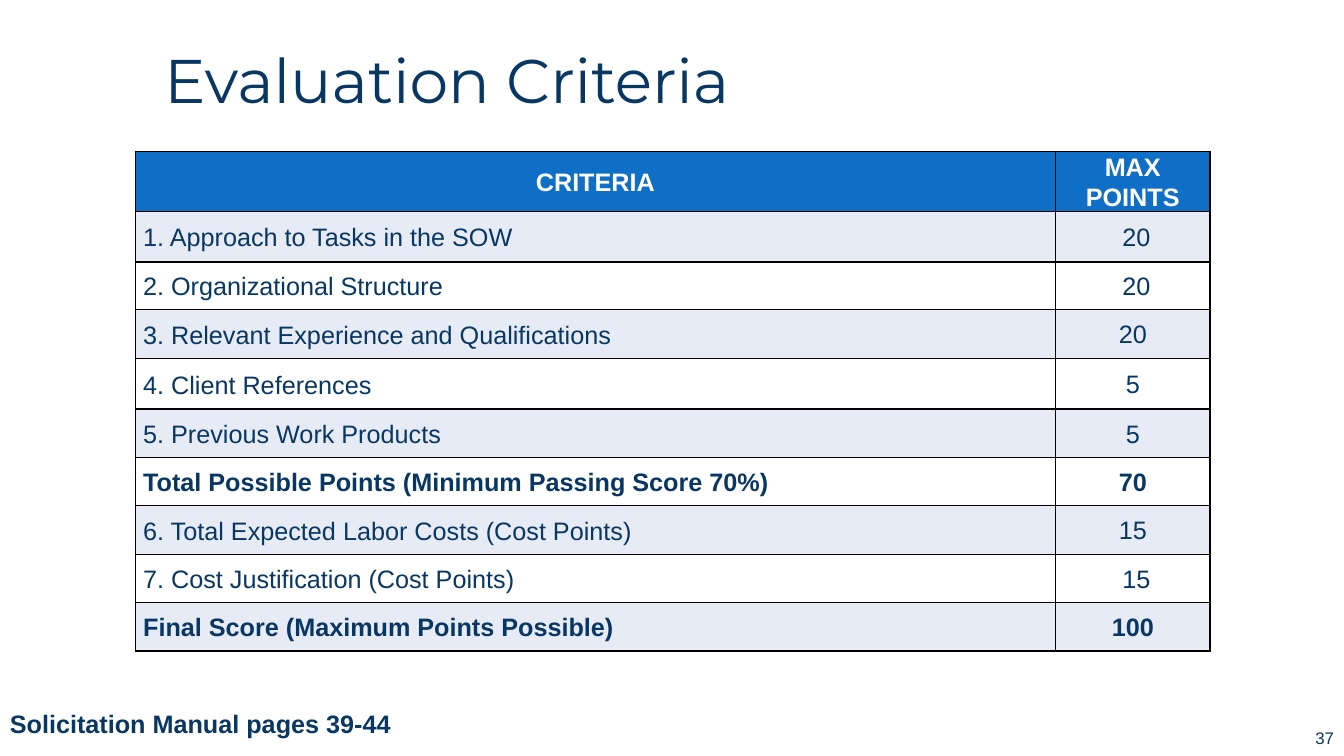
from pptx import Presentation
from pptx.dml.color import RGBColor
from pptx.enum.text import MSO_ANCHOR as Anchor, MSO_AUTO_SIZE as AutoSize, PP_ALIGN as Align
from pptx.oxml import parse_xml
from pptx.oxml.ns import nsdecls
from pptx.util import Inches, Pt

TITLE = "Evaluation Criteria"
HEADER = ("CRITERIA", "MAX POINTS")
CRITERIA = [
    ("1. Approach to Tasks in the SOW", " 20"),
    ("2. Organizational Structure", " 20"),
    ("3. Relevant Experience and Qualifications", "20"),
    ("4. Client References", "5"),
    ("5. Previous Work Products", "5"),
    ("Total Possible Points (Minimum Passing Score 70%)", "70"),
    ("6. Total Expected Labor Costs (Cost Points)", "15"),
    ("7. Cost Justification (Cost Points)", " 15"),
    ("Final Score (Maximum Points Possible)", "100"),
]
BOLD_ROWS = {0, 6, 9}
COLUMN_WIDTHS = (9.13, 1.53)
ROW_HEIGHTS = (0.51, 0.5, 0.47, 0.49, 0.5) + (0.48,) * 5
CAPTIONS = [
    ("Solicitation Manual pages 39-44", (0, 6.98, 4.39, 0.71), Anchor.TOP, Align.LEFT,
     {"size": Pt(18), "bold": True}),
    ("37", (11.36, 7.12, 1.97, 0.4), Anchor.MIDDLE, Align.RIGHT,
     {"size": Pt(12), "bold": False}),
]
COLORS = {"navy": "083763", "header": "0F6FC6", "band": "E7EBF5",
          "white": "FFFFFF", "border": "000000"}


def set_attributes(target, values):
    for name, value in values.items():
        setattr(target, name, value)


def write(frame, text, align, color, font, line_spacing=None):
    para = frame.paragraphs[0]
    set_attributes(para, {"alignment": align, "line_spacing": line_spacing})
    span = para.add_run()
    span.text = text
    set_attributes(span.font, {"name": "Arial", **font})
    span.font.color.rgb = RGBColor.from_string(COLORS[color])


def add_borders(cell):
    properties = cell._tc.get_or_add_tcPr()
    for index, side in enumerate(("lnL", "lnR", "lnT", "lnB")):
        properties.insert(index, parse_xml(
            f'<a:{side} {nsdecls("a")} w="{Pt(1)}"><a:solidFill>'
            f'<a:srgbClr val="{COLORS["border"]}"/></a:solidFill></a:{side}>'))


def add_title(page):
    title = page.shapes.title
    set_attributes(title, {"left": Inches(1.53), "top": Inches(0.26),
                           "width": Inches(10.89), "height": Inches(1.14)})
    frame = title.text_frame
    set_attributes(frame, {"vertical_anchor": Anchor.MIDDLE, "word_wrap": True,
                           "auto_size": AutoSize.NONE})
    write(frame, TITLE, Align.LEFT, "navy", {"name": "Montserrat", "size": Pt(44)}, 0.9)


def add_criteria_table(page):
    rows = [HEADER] + CRITERIA
    table = page.shapes.add_table(
        len(rows), len(HEADER), Inches(1.34), Inches(1.5),
        Inches(sum(COLUMN_WIDTHS)), Inches(sum(ROW_HEIGHTS))).table
    for column, width in zip(table.columns, COLUMN_WIDTHS):
        column.width = Inches(width)
    for row, height in zip(table.rows, ROW_HEIGHTS):
        row.height = Inches(height)
    for row_index, texts in enumerate(rows):
        is_header = row_index == 0
        fill = "header" if is_header else ("white", "band")[row_index % 2]
        for column_index, text in enumerate(texts):
            cell = table.cell(row_index, column_index)
            side = Inches((0.08, 0.07)[column_index])
            set_attributes(cell, {
                "margin_left": side, "margin_right": side,
                "margin_top": Inches((0.01, 0)[column_index]), "margin_bottom": 0,
                "vertical_anchor": Anchor.MIDDLE})
            cell.fill.solid()
            cell.fill.fore_color.rgb = RGBColor.from_string(COLORS[fill])
            align = Align.CENTER if is_header or column_index else Align.LEFT
            write(cell.text_frame, text, align, "white" if is_header else "navy",
                  {"size": Pt(18), "bold": row_index in BOLD_ROWS}, 1.07)
            add_borders(cell)


def add_captions(page):
    for text, place, anchor, align, font in CAPTIONS:
        box = page.shapes.add_textbox(*map(Inches, place))
        set_attributes(box.text_frame, {"word_wrap": True, "vertical_anchor": anchor})
        write(box.text_frame, text, align, "navy", font)


def main():
    deck = Presentation()
    set_attributes(deck, {"slide_width": Inches(13.33), "slide_height": Inches(7.5)})
    page = deck.slides.add_slide(deck.slide_layouts.get_by_name("Title Only"))
    add_title(page)
    add_criteria_table(page)
    add_captions(page)
    deck.save("out.pptx")


if __name__ == "__main__":
    main()
